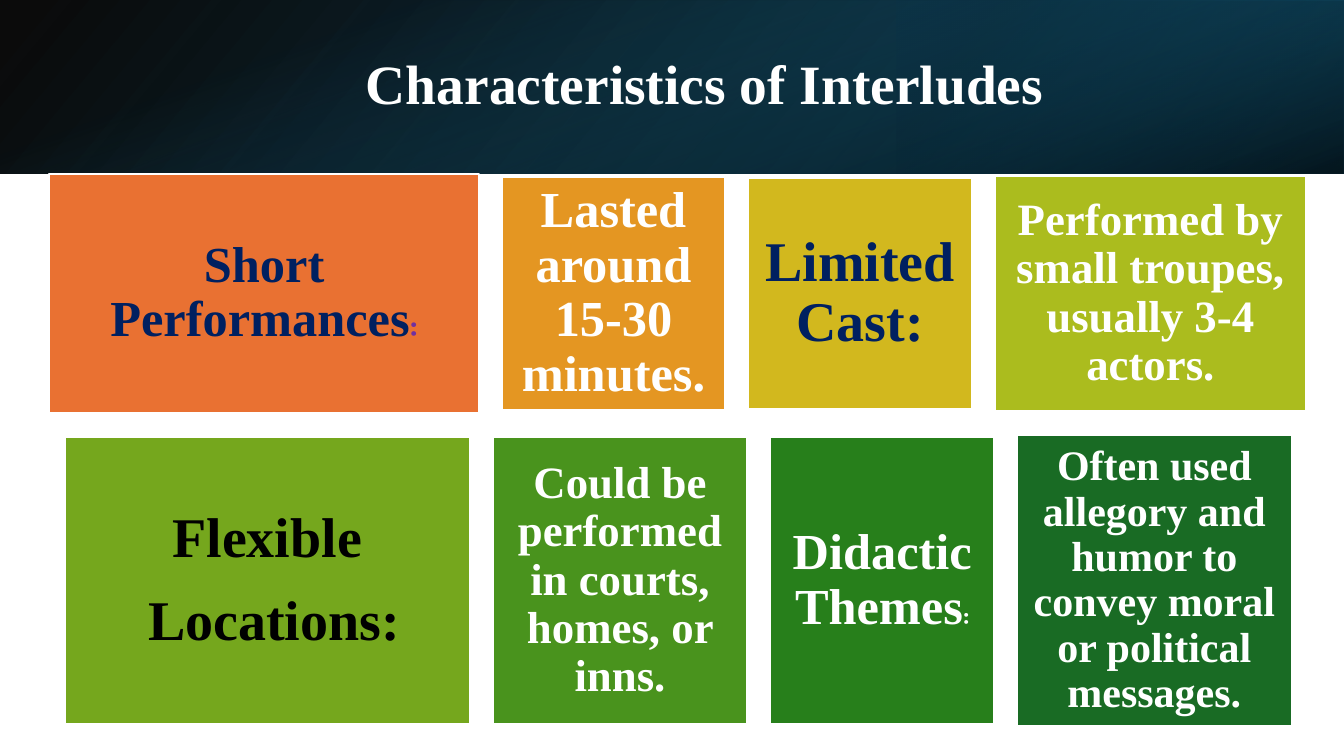
from lxml.etree import SubElement
from pptx import Presentation
from pptx.dml.color import RGBColor
from pptx.enum.shapes import MSO_SHAPE
from pptx.enum.text import MSO_ANCHOR, MSO_AUTO_SIZE, PP_ALIGN
from pptx.oxml.ns import qn
from pptx.util import Inches, Pt

# Content: each card is (width, height, fill, text size, text colour, lines, colon)
# and a colon set apart from its heading is (size, colour).
TITLE = "Characteristics of Interludes"
THEME = {
    "font": "Times New Roman", "colon_font": "Karla", "title_size": 39.6,
    "white": "FFFFFF", "black": "000000", "navy": "002060", "purple": "7030A0",
    "line_spacing": 0.9, "paragraph_gap": 0.4, "inset": 0.3, "outline": 1.5,
}
ROWS = [
    # (left, vertical centre, cards)
    (0.49, 2.91, [
        (4.26, 2.37, "E97132", 36, "navy", ["Short Performances"], (21, "purple")),
        (2.22, 2.31, "E49622", 36, "white", ["Lasted around 15-30 minutes."], None),
        (2.22, 2.29, "D2B81E", 40, "navy", ["Limited Cast:"], None),
        (3.09, 2.33, "ABBC1E", 32, "white",
         ["Performed by small troupes, usually 3-4 actors."], None),
    ]),
    (0.64, 5.76, [
        (4.02, 2.84, "75A71D", 40, "black", ["Flexible", " Locations:"], None),
        (2.53, 2.84, "49931D", 32, "white",
         ["Could be performed in courts, homes, or inns."], None),
        (2.22, 2.84, "277F1B", 36, "white", ["Didactic Themes"], (17, "white")),
        (2.73, 2.89, "196B24", 30, "white",
         ["Often used allegory and humor to convey moral or political messages."], None),
    ]),
]
CARD_GAP = 0.225
# Header layers: (box, rotation, mirrored, angle, stops as (position, colour, opacity))
HEADER = [
    ((0, 0, 13.33, 1.72), 0, True, 140, [(0, "000000", 96), (100, "104862", 100)]),
    ((8.89, 0, 4.44, 1.72), 180, True, 320, [(19, "0B3041", 68), (100, "156082", 79)]),
    ((5.8, -5.8, 1.72, 13.33), 90, False, 340, [(23, "156082", 0), (99, "000000", 74)]),
]


def add_rectangle(slide, box):
    shape = slide.shapes.add_shape(MSO_SHAPE.RECTANGLE, *map(Inches, box))
    shape.shadow.inherit = False
    return shape


def set_gradient(shape, angle, stops):
    shape.fill.gradient()
    gradient = shape._element.spPr.find(qn("a:gradFill"))
    for child in list(gradient):
        gradient.remove(child)
    gradient.set("rotWithShape", "1")
    stop_list = SubElement(gradient, qn("a:gsLst"))
    for position, colour, opacity in stops:
        stop = SubElement(stop_list, qn("a:gs"), pos=str(position * 1000))
        tint = SubElement(stop, qn("a:srgbClr"), val=colour)
        SubElement(tint, qn("a:alpha"), val=str(opacity * 1000))
    SubElement(gradient, qn("a:lin"), ang=str(angle * 60000), scaled="0")


def format_run(run, size, colour, font=THEME["font"], bold=True):
    run.font.name = font
    run.font.size = Pt(size)
    run.font.bold = bold
    run.font.color.rgb = RGBColor.from_string(THEME[colour])


def add_card(slide, box, fill, size, colour, lines, colon):
    card = add_rectangle(slide, box)
    card.fill.solid()
    card.fill.fore_color.rgb = RGBColor.from_string(fill)
    card.line.color.rgb = RGBColor.from_string(THEME["white"])
    card.line.width = Pt(THEME["outline"])
    frame = card.text_frame
    frame.word_wrap = True
    frame.vertical_anchor = MSO_ANCHOR.MIDDLE
    inset = Pt(size * THEME["inset"])
    frame.margin_left = frame.margin_right = inset
    frame.margin_top = frame.margin_bottom = inset
    frame.text = "\n".join(lines)
    for paragraph in frame.paragraphs:
        paragraph.alignment = PP_ALIGN.CENTER
        paragraph.line_spacing = THEME["line_spacing"]
        format_run(paragraph.runs[0], size, colour)
    for paragraph in frame.paragraphs[:-1]:
        paragraph.space_after = Pt(size * THEME["paragraph_gap"])
    if colon:
        run = frame.paragraphs[-1].add_run()
        run.text = ":"
        format_run(run, *colon, font=THEME["colon_font"])


def main():
    presentation = Presentation()
    presentation.slide_width = Inches(13.33)
    presentation.slide_height = Inches(7.5)
    slide = presentation.slides.add_slide(presentation.slide_layouts[5])

    # Header band
    for box, rotation, mirrored, angle, stops in HEADER:
        layer = add_rectangle(slide, box)
        layer.rotation = rotation
        if mirrored:
            layer._element.spPr.find(qn("a:xfrm")).set("flipH", "1")
        set_gradient(layer, angle, stops)
        layer.line.fill.background()

    # Title, raised above the band
    title = slide.shapes.title
    title.left, title.top = Inches(1.5), Inches(0.38)
    title.width, title.height = Inches(10.98), Inches(0.96)
    frame = title.text_frame
    frame.text = TITLE
    frame.auto_size = MSO_AUTO_SIZE.NONE
    frame.vertical_anchor = MSO_ANCHOR.MIDDLE
    paragraph = frame.paragraphs[0]
    paragraph.alignment = PP_ALIGN.CENTER
    paragraph.line_spacing = THEME["line_spacing"]
    format_run(paragraph.runs[0], THEME["title_size"], "white")
    slide.shapes._spTree.append(title._element)

    # Cards, centred on each row's axis
    for left, centre, cards in ROWS:
        for width, height, *style in cards:
            add_card(slide, (left, centre - height / 2, width, height), *style)
            left += width + CARD_GAP

    presentation.save("out.pptx")


if __name__ == "__main__":
    main()
